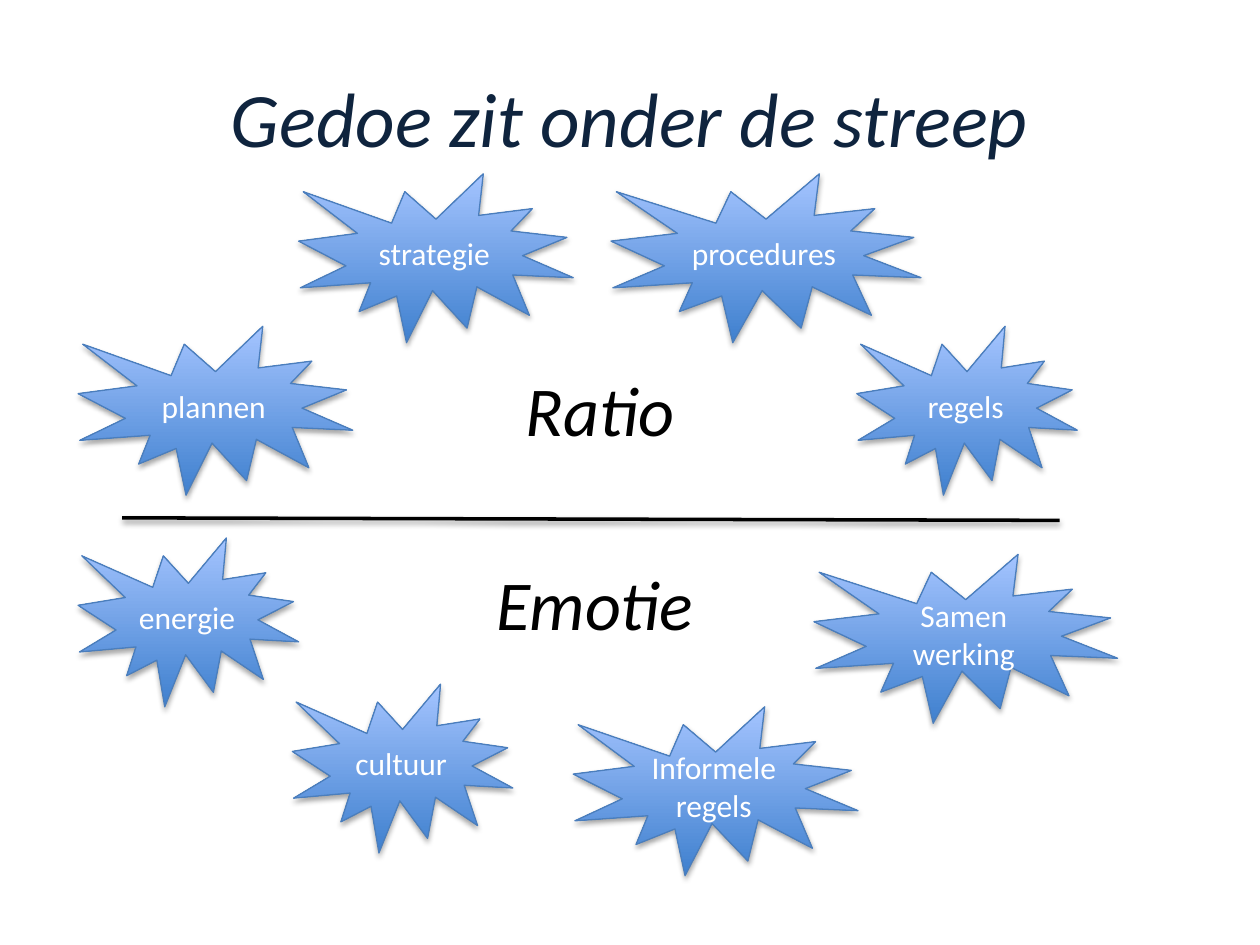
from lxml.etree import SubElement
from pptx import Presentation
from pptx.dml.color import RGBColor
from pptx.enum.shapes import MSO_CONNECTOR as Connector, MSO_SHAPE as Shape
from pptx.enum.text import MSO_ANCHOR as Anchor, MSO_AUTO_SIZE as AutoSize, PP_ALIGN as Align
from pptx.oxml.ns import qn
from pptx.util import Inches, Pt

BURST_HEIGHT = 1.34

# Text, left, top, width
BURSTS = [
    ("plannen", 0.62, 2.59, 2.18),
    ("regels", 6.8, 2.59, 1.75),
    ("strategie", 2.37, 1.38, 2.18),
    ("procedures", 4.85, 1.38, 2.46),
    ("cultuur", 2.32, 5.43, 1.75),
    ("Informele regels", 4.55, 5.61, 2.26),
    ("Samen\nwerking", 6.46, 4.4, 2.41),
    ("energie", 0.62, 4.27, 1.75),
]


def color(hex_code):
    return RGBColor.from_string(hex_code)


def write(frame, text, size=18, fill="FFFFFF", italic=False,
          align=Align.CENTER, anchor=Anchor.MIDDLE):
    frame.text = text
    frame.word_wrap = True
    frame.vertical_anchor = anchor
    for paragraph in frame.paragraphs:
        paragraph.alignment = align
        for run in paragraph.runs:
            run.font.name = "Calibri"
            run.font.size = Pt(size)
            run.font.italic = italic
            run.font.color.rgb = color(fill)


def add_shadow(element, distance, opacity):
    """Cast a soft black shadow straight down; call after fill and line are set."""
    effects = SubElement(element.spPr, qn("a:effectLst"))
    shadow = SubElement(effects, qn("a:outerShdw"), blurRad=str(Pt(3.1)),
                        dist=str(Pt(distance)), dir="5400000", rotWithShape="0")
    black = SubElement(shadow, qn("a:srgbClr"), val="000000")
    SubElement(black, qn("a:alpha"), val=str(opacity * 1000))


def add_burst(slide, text, left, top, width):
    burst = slide.shapes.add_shape(Shape.EXPLOSION1, Inches(left), Inches(top),
                                   Inches(width), Inches(BURST_HEIGHT))
    burst.fill.gradient()
    burst.fill.gradient_angle = 90
    for stop, shade in zip(burst.fill.gradient_stops, ("3F80CE", "A4C4FF")):
        stop.color.rgb = color(shade)
    burst.line.color.rgb = color("4B7EBC")
    burst.line.width = Pt(0.75)
    add_shadow(burst._element, 1.8, 35)
    write(burst.text_frame, text)


def add_divider(slide):
    divider = slide.shapes.add_connector(Connector.STRAIGHT, Inches(0.97), Inches(4.11),
                                         Inches(8.41), Inches(4.13))
    divider.line.color.rgb = color("000000")
    divider.line.width = Pt(2)
    add_shadow(divider._element, 1.6, 38)


def add_label(slide, text, left, top, width):
    label = slide.shapes.add_textbox(Inches(left), Inches(top), Inches(width), Inches(0.77))
    write(label.text_frame, text, size=40, fill="000000", italic=True,
          align=Align.LEFT, anchor=Anchor.TOP)
    label.text_frame.auto_size = AutoSize.SHAPE_TO_FIT_TEXT


def set_title(slide, text):
    title = slide.shapes.title
    title.left, title.top = Inches(0.5), Inches(0.3)
    title.width, title.height = Inches(9), Inches(1.25)
    write(title.text_frame, text, size=44, fill="0F243E", italic=True)


def main():
    deck = Presentation()
    deck.slide_width, deck.slide_height = Inches(10), Inches(7.5)
    slide = deck.slides.add_slide(deck.slide_layouts[5])

    set_title(slide, "Gedoe zit onder de streep")

    # Topics above and below the line
    for burst in BURSTS:
        add_burst(slide, *burst)

    # The line and the names of its two sides
    add_divider(slide)
    add_label(slide, "Ratio", 4.07, 2.86, 1.97)
    add_label(slide, "Emotie", 3.84, 4.4, 1.78)

    deck.save("out.pptx")


if __name__ == "__main__":
    main()
